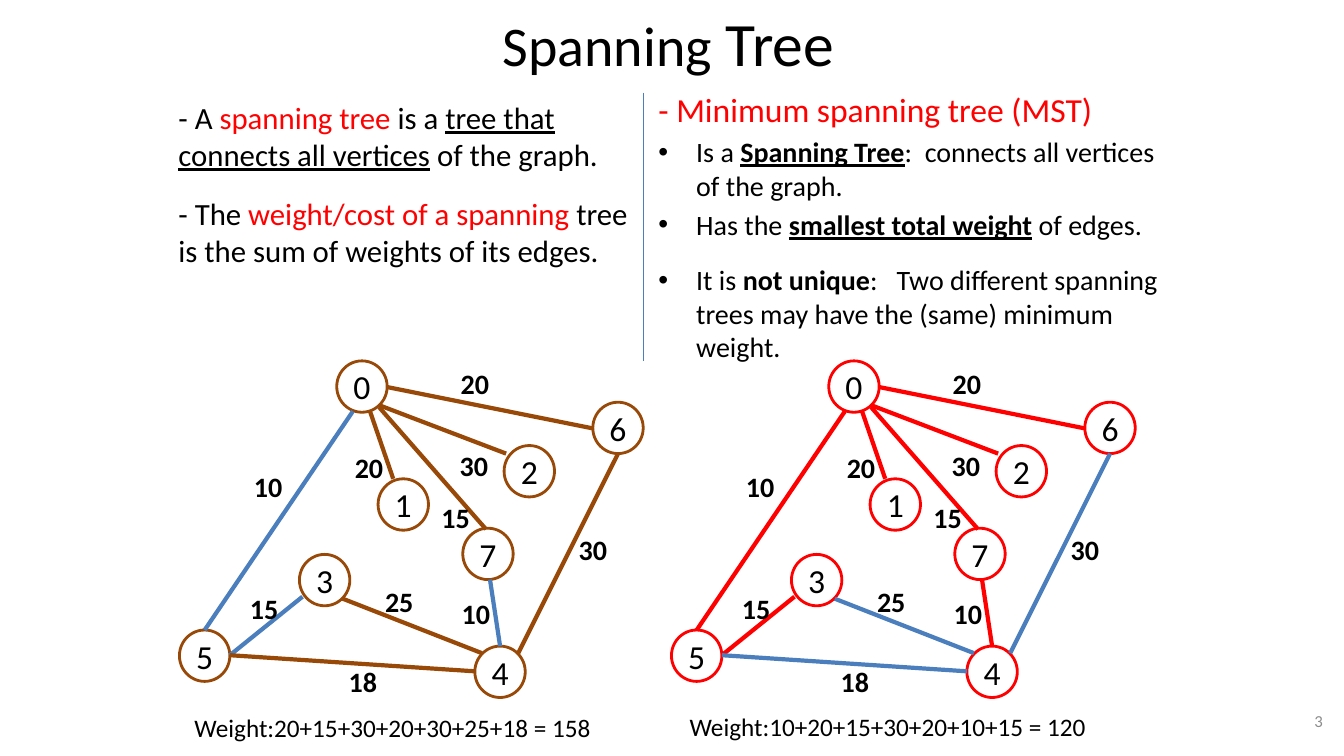
from dataclasses import dataclass

from lxml import etree
from pptx import Presentation
from pptx.dml.color import RGBColor
from pptx.enum.shapes import MSO_CONNECTOR, MSO_SHAPE
from pptx.enum.text import MSO_ANCHOR, MSO_AUTO_SIZE, PP_ALIGN
from pptx.oxml.ns import qn
from pptx.util import Inches, Pt

STRAIGHT, OVAL = MSO_CONNECTOR.STRAIGHT, MSO_SHAPE.OVAL
MIDDLE, NO_FIT = MSO_ANCHOR.MIDDLE, MSO_AUTO_SIZE.NONE
LEFT, CENTER, RIGHT = PP_ALIGN.LEFT, PP_ALIGN.CENTER, PP_ALIGN.RIGHT


@dataclass(frozen=True)
class Theme:
    font: str = "Calibri"
    ink: str = "000000"
    accent: str = "FF0000"
    brown: str = "984807"
    blue: str = "4B7EBC"
    grey: str = "8C8C8C"
    title: int = 40
    title_large: int = 44
    definition: int = 22
    heading: int = 24
    bullet: int = 20
    vertex: int = 24
    edge_weight: int = 20
    total: int = 18
    page: int = 12


THEME = Theme()

# A run is (text, marks): r = accent colour, b = bold, u = underline.
# A paragraph is (size, space before in points, bulleted, runs).
DEFINITIONS = [
    (THEME.definition, 4.4, False, [
        ("- A ", ""), ("spanning tree", "r"), (" is a ", ""), ("tree that", "u"),
        (" ", ""), ("connects all vertices", "u"), (" of the graph.", "")]),
    (THEME.definition, 16, False, [
        ("- The ", ""), ("weight/cost of a spanning ", "r"),
        ("tree is the sum of weights of its edges.", "")]),
]
MST_FACTS = [
    (THEME.heading, 4.8, False, [("- Minimum spanning tree (MST)", "r")]),
    (THEME.bullet, 4, True, [
        ("Is a ", ""), ("Spanning Tree", "bu"),
        (":  connects all vertices of the graph.", "")]),
    (THEME.bullet, 4, True, [
        ("Has the ", ""), ("smallest", "bu"), (" ", "u"), ("total weight", "bu"),
        (" of edges.", "")]),
    (THEME.bullet, 15.4, True, [
        ("It is ", ""), ("not unique", "b"),
        (":   Two different spanning trees may have the (same) minimum weight.", "")]),
]

VERTICES = {  # left, top
    0: (3.34, 3.58), 1: (3.75, 4.75), 7: (4.59, 5.24), 2: (5, 4.42),
    5: (1.78, 6.25), 3: (2.97, 5.5), 4: (4.71, 6.41), 6: (5.88, 3.99),
}
EDGES = {  # start, end, weight, left and top of the weight
    (0, 6): ((3.84, 3.84), (5.88, 4.25), 20, (4.47, 3.58)),
    (0, 2): ((3.76, 4.02), (5.02, 4.5), 30, (4.46, 4.4)),
    (0, 1): ((3.67, 4.08), (3.9, 4.75), 20, (3.42, 4.42)),
    (0, 5): ((3.5, 4.08), (2.03, 6.25), 10, (2.42, 4.6)),
    (0, 7): ((3.76, 4.04), (4.82, 5.25), 15, (4.28, 4.91)),
    (5, 3): ((2.28, 6.5), (3, 5.92), 15, (2.38, 5.81)),
    (5, 4): ((2.28, 6.5), (4.71, 6.66), 18, (3.36, 6.54)),
    (3, 4): ((3.4, 5.94), (4.78, 6.48), 25, (3.72, 5.75)),
    (7, 4): ((4.86, 5.75), (4.96, 6.41), 10, (4.48, 5.86)),
    (6, 4): ((6.13, 4.5), (5.14, 6.48), 30, (5.64, 5.23)),
}
# shift to the right, tree colour, edges left out of the tree, total, its place
TREES = [
    (0, THEME.brown, {(0, 5), (5, 3), (7, 4)},
     "Weight:20+15+30+20+30+25+18 = 158", (1.83, 7.02)),
    (4.88, THEME.accent, {(5, 4), (3, 4), (6, 4)},
     "Weight:10+20+15+30+20+10+15 = 120", (6.74, 7.01)),
]


def add_run(paragraph, text, size, color=THEME.ink, bold=False, underline=False):
    run = paragraph.add_run()
    run.text = text
    font = run.font
    font.name, font.size, font.bold, font.underline = THEME.font, Pt(size), bold, underline
    font.color.rgb = RGBColor.from_string(color)


def place(shape, left, top, width, height):
    shape.left, shape.top = Inches(left), Inches(top)
    shape.width, shape.height = Inches(width), Inches(height)


def fill_body(body, paragraphs):
    frame = body.text_frame
    frame.auto_size = NO_FIT
    for index, (size, before, bulleted, runs) in enumerate(paragraphs):
        paragraph = frame.add_paragraph() if index else frame.paragraphs[0]
        paragraph.space_before = Pt(before)
        if not bulleted:
            properties = paragraph._p.get_or_add_pPr()
            properties.set("marL", "0")
            properties.set("indent", "0")
            etree.SubElement(properties, qn("a:buNone"))
        for text, marks in runs:
            color = THEME.accent if "r" in marks else THEME.ink
            add_run(paragraph, text, size, color, "b" in marks, "u" in marks)


def add_label(slide, box, text, size, color=THEME.ink, bold=False, align=LEFT):
    frame = slide.shapes.add_textbox(*map(Inches, box)).text_frame
    frame.word_wrap = align == RIGHT
    frame.vertical_anchor = MIDDLE
    frame.paragraphs[0].alignment = align
    add_run(frame.paragraphs[0], text, size, color, bold)


def add_line(slide, start, end, color, width):
    line = slide.shapes.add_connector(STRAIGHT, *map(Inches, (*start, *end)))
    line.line.color.rgb = RGBColor.from_string(color)
    line.line.width = Pt(width)
    etree.SubElement(line._element.spPr, qn("a:effectLst"))


def add_vertex(slide, name, left, top, color):
    vertex = slide.shapes.add_shape(OVAL, *map(Inches, (left, top, 0.5, 0.51)))
    vertex.shadow.inherit = False
    vertex.fill.background()
    vertex.line.color.rgb = RGBColor.from_string(color)
    vertex.line.width = Pt(2)
    frame = vertex.text_frame
    frame.margin_left = frame.margin_right = frame.margin_top = frame.margin_bottom = 0
    frame.word_wrap = False
    frame.vertical_anchor = MIDDLE
    frame.paragraphs[0].alignment = CENTER
    add_run(frame.paragraphs[0], str(name), THEME.vertex)


def add_tree(slide, shift, color, left_out, total, total_at):
    for name, (left, top) in VERTICES.items():
        add_vertex(slide, name, left + shift, top, color)
    for ends, (start, end, weight, (left, top)) in EDGES.items():
        edge_color = THEME.blue if ends in left_out else color
        add_line(slide, (start[0] + shift, start[1]), (end[0] + shift, end[1]),
                 edge_color, 3)
        add_label(slide, (left + shift, top, 0.49, 0.44), str(weight),
                  THEME.edge_weight, bold=True)
    add_label(slide, (*total_at, 4.18, 0.4), total, THEME.total)


def main():
    deck = Presentation()
    deck.slide_width, deck.slide_height = Inches(13.33), Inches(7.5)
    slide = deck.slides.add_slide(deck.slide_layouts.get_by_name("Two Content"))
    title, definitions, mst_facts = slide.placeholders

    place(title, 2, 0, 9.26, 0.83)
    title.text_frame.auto_size = NO_FIT
    heading = title.text_frame.paragraphs[0]
    add_run(heading, "Spanning", THEME.title)
    add_run(heading, " Tree", THEME.title_large)

    place(definitions, 1.67, 0.93, 4.76, 2.15)
    fill_body(definitions, DEFINITIONS)
    place(mst_facts, 6.43, 0.83, 5.24, 2.75)
    fill_body(mst_facts, MST_FACTS)
    add_line(slide, (6.38, 0.92), (6.38, 3.58), THEME.blue, 0.75)

    for tree in TREES:
        add_tree(slide, *tree)
    add_label(slide, (10.11, 6.95, 3.11, 0.4), "3", THEME.page, THEME.grey, align=RIGHT)
    deck.save("out.pptx")


if __name__ == "__main__":
    main()
